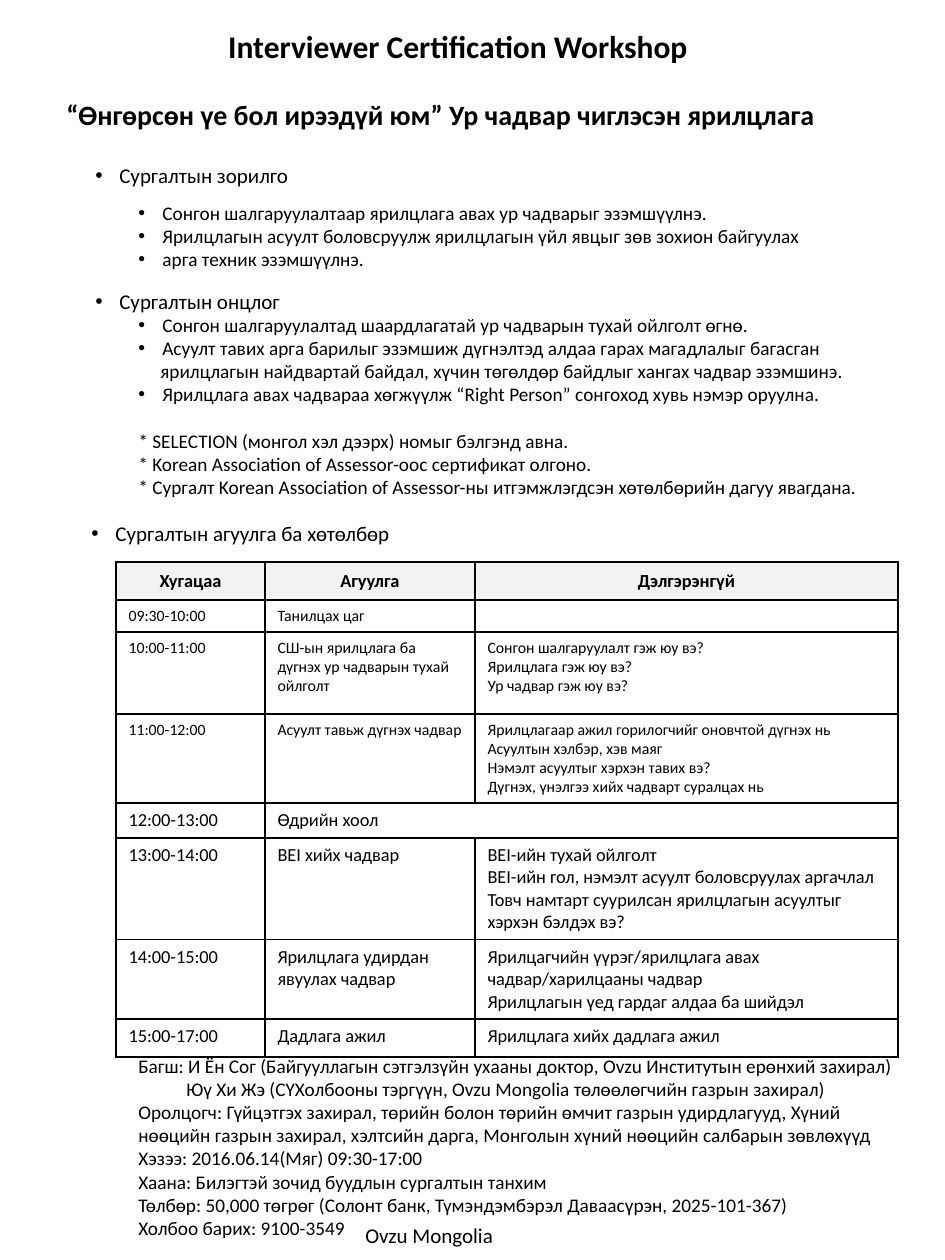
import pptx
import pptx.util
import pptx.dml.color
import pptx.enum.text
import pptx.oxml.ns
import lxml.etree
from dataclasses import dataclass

PX = 914400 / 126


@dataclass(frozen=True)
class Theme:
    font: str = "Calibri"
    ink: str = "000000"
    header_fill: str = "F2F2F2"
    title: float = 18
    subtitle: float = 16
    heading: float = 12
    body: float = 11
    table: float = 10.5
    table_small: float = 9
    border: float = 1


T = Theme()
BULLET, PLAIN, CONTINUED, SECOND_NAME, AFTER_GAP = range(5)
MARGINS = {CONTINUED: 22, SECOND_NAME: 48}
HANG = 24
GAP = 13.4

TITLE = [(PLAIN, "Interviewer Certification Workshop")]
SUBTITLE = [(PLAIN, "“Өнгөрсөн үе бол ирээдүй юм” Ур чадвар чиглэсэн ярилцлага")]
GOALS = [
    (BULLET, "Сонгон шалгаруулалтаар ярилцлага авах ур чадварыг эзэмшүүлнэ."),
    (BULLET, "Ярилцлагын асуулт боловсруулж ярилцлагын үйл явцыг зөв зохион байгуулах"),
    (BULLET, "арга техник эзэмшүүлнэ."),
]
FEATURES = [
    (BULLET, "Сонгон шалгаруулалтад шаардлагатай ур чадварын тухай ойлголт өгнө."),
    (BULLET, "Асуулт тавих арга барилыг эзэмшиж дүгнэлтэд алдаа гарах магадлалыг багасган"),
    (CONTINUED, "ярилцлагын найдвартай байдал, хүчин төгөлдөр байдлыг хангах чадвар эзэмшинэ."),
    (BULLET, "Ярилцлага авах чадвараа хөгжүүлж “Right Person” сонгоход хувь нэмэр оруулна."),
    (AFTER_GAP, "* SELECTION (монгол хэл дээрх) номыг бэлгэнд авна."),
    (PLAIN, "* Korean Association of Assessor-оос сертификат олгоно."),
    (PLAIN, "* Сургалт Korean Association of Assessor-ны итгэмжлэгдсэн хөтөлбөрийн дагуу явагдана."),
]
DETAILS = [
    (PLAIN, "Багш: И Ён Сог (Байгууллагын сэтгэлзүйн ухааны доктор, Ovzu Институтын ерөнхий захирал)"),
    (SECOND_NAME, "Юү Хи Жэ (СҮХолбооны тэргүүн, Ovzu Mongolia төлөөлөгчийн газрын захирал)"),
    (PLAIN, "Оролцогч: Гүйцэтгэх захирал, төрийн болон төрийн өмчит газрын удирдлагууд, Хүний "
            "нөөцийн газрын захирал, хэлтсийн дарга, Монголын хүний нөөцийн салбарын зөвлөхүүд"),
    (PLAIN, "Хэзээ: 2016.06.14(Мяг) 09:30-17:00"),
    (PLAIN, "Хаана: Билэгтэй зочид буудлын сургалтын танхим"),
    (PLAIN, "Төлбөр: 50,000 төгрөг (Солонт банк, Түмэндэмбэрэл Даваасүрэн, 2025-101-367)"),
    (PLAIN, "Холбоо барих: 9100-3549"),
]
BOXES = [
    ((213, 21, 490, 51), T.title, TITLE),
    ((54, 91, 784, 47), T.subtitle, SUBTITLE),
    ((83, 156, 224, 38), T.heading, [(BULLET, "Сургалтын зорилго")]),
    ((126, 195, 698, 83), T.body, GOALS),
    ((83, 282, 216, 38), T.heading, [(BULLET, "Сургалтын онцлог")]),
    ((126, 307, 756, 199), T.body, FEATURES),
    ((79, 514, 331, 38), T.heading, [(BULLET, "Сургалтын агуулга ба хөтөлбөр")]),
    ((126, 1048, 794, 223), T.body, DETAILS),
    ((353, 1216, 154, 38), T.heading, [(PLAIN, "Ovzu Mongolia")]),
]

TABLE_AT = (116, 562)
COLUMNS = [149, 210, 423]
ROWS = [
    (38, T.table, ["Хугацаа", "Агуулга", "Дэлгэрэнгүй"]),
    (31, T.table_small, ["09:30-10:00", "Танилцах цаг", ""]),
    (82, T.table_small, [
        "10:00-11:00", "СШ-ын ярилцлага ба дүгнэх ур чадварын тухай ойлголт",
        "Сонгон шалгаруулалт гэж юу вэ?\nЯрилцлага гэж юу вэ?\nУр чадвар гэж юу вэ?"]),
    (88, T.table_small, [
        "11:00-12:00", "Асуулт тавьж дүгнэх чадвар",
        "Ярилцлагаар ажил горилогчийг оновчтой дүгнэх нь\nАсуултын хэлбэр, хэв маяг\n"
        "Нэмэлт асуултыг хэрхэн тавих вэ?\nДүгнэх, үнэлгээ хийх чадварт суралцах нь"]),
    (35, T.table, ["12:00-13:00", "Өдрийн хоол", None]),
    (101, T.table, [
        "13:00-14:00", "BEI хийх чадвар",
        "BEI-ийн тухай ойлголт\nBEI-ийн гол, нэмэлт асуулт боловсруулах аргачлал\n"
        "Товч намтарт суурилсан ярилцлагын асуултыг хэрхэн бэлдэх вэ?"]),
    (78, T.table, [
        "14:00-15:00", "Ярилцлага удирдан явуулах чадвар",
        "Ярилцагчийн үүрэг/ярилцлага авах чадвар/харилцааны чадвар\n"
        "Ярилцлагын үед гардаг алдаа ба шийдэл"]),
    (38, T.table, ["15:00-17:00", "Дадлага ажил", "Ярилцлага хийх дадлага ажил"]),
]


def px(n):
    return pptx.util.Emu(round(n * PX))


def color(value):
    return pptx.dml.color.RGBColor.from_string(value)


def add_xml(parent, tag, **attrs):
    return lxml.etree.SubElement(parent, pptx.oxml.ns.qn(tag), attrs)


def style_runs(p, size, bold=False):
    for r in p.runs:
        r.font.name = T.font
        r.font.size = pptx.util.Pt(size)
        r.font.bold = bold
        r.font.color.rgb = color(T.ink)
    if not p.runs:
        add_xml(p._p, "a:endParaRPr", sz=str(round(size * 100)))


def add_text(s, at, size, lines):
    tf = s.shapes.add_textbox(*map(px, at)).text_frame
    tf.word_wrap = lines is DETAILS
    tf.text = "\n".join(text for _, text in lines)
    for p, (kind, _) in zip(tf.paragraphs, lines):
        pPr = p._p.get_or_add_pPr()
        if kind == BULLET:
            pPr.set("marL", str(px(HANG)))
            pPr.set("indent", str(px(-HANG)))
            add_xml(pPr, "a:buFont", typeface="Arial")
            add_xml(pPr, "a:buChar", char="•")
        elif kind in MARGINS:
            pPr.set("marL", str(px(MARGINS[kind])))
        elif kind == AFTER_GAP:
            p.space_before = pptx.util.Pt(GAP)
        if lines is TITLE:
            p.alignment = pptx.enum.text.PP_ALIGN.CENTER
        style_runs(p, size, bold=lines in (TITLE, SUBTITLE))


def style_cell(cell, header):
    tcPr = cell._tc.get_or_add_tcPr()
    for side in ("a:lnL", "a:lnR", "a:lnT", "a:lnB"):
        ln = add_xml(tcPr, side, w=str(pptx.util.Pt(T.border)))
        add_xml(add_xml(ln, "a:solidFill"), "a:srgbClr", val=T.ink)
    if header:
        cell.fill.solid()
        cell.fill.fore_color.rgb = color(T.header_fill)
        cell.vertical_anchor = pptx.enum.text.MSO_ANCHOR.MIDDLE
    else:
        cell.fill.background()


def add_schedule(s):
    size = (sum(COLUMNS), sum(height for height, _, _ in ROWS))
    table = s.shapes.add_table(len(ROWS), len(COLUMNS), *map(px, TABLE_AT + size)).table
    table.first_row = table.horz_banding = False
    for column, width in zip(table.columns, COLUMNS):
        column.width = px(width)
    for i, (height, points, texts) in enumerate(ROWS):
        table.rows[i].height = px(height)
        for j, text in enumerate(texts):
            cell = table.cell(i, j)
            cell.text_frame.text = text or ""
            style_cell(cell, header=i == 0)
            for p in cell.text_frame.paragraphs:
                if i == 0:
                    p.alignment = pptx.enum.text.PP_ALIGN.CENTER
                style_runs(p, points, bold=i == 0)
            if text is None:
                table.cell(i, j - 1).merge(cell)


def main():
    prs = pptx.Presentation()
    prs.slide_width, prs.slide_height = px(945), px(1260)
    s = prs.slides.add_slide(prs.slide_layouts[6])
    add_schedule(s)
    for at, size, lines in BOXES:
        add_text(s, at, size, lines)
    prs.save("out.pptx")


if __name__ == "__main__":
    main()
